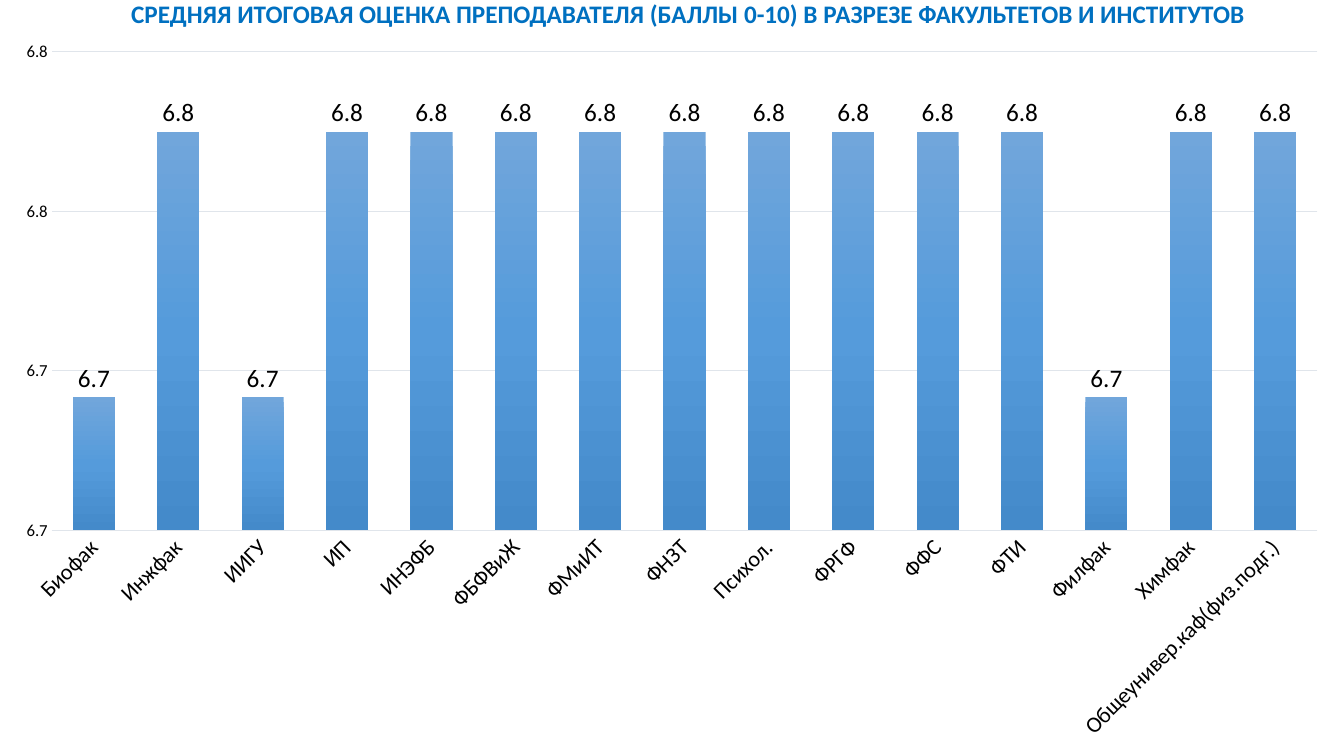
import copy
from dataclasses import dataclass
from typing import NamedTuple

import pptx
import pptx.chart.data
import pptx.dml.color
import pptx.enum.chart
import pptx.enum.text
import pptx.oxml
import pptx.oxml.ns
import pptx.util

Pt = pptx.util.Pt
RGBColor = pptx.dml.color.RGBColor


@dataclass(frozen=True)
class Theme:
    font: str = "Calibri"
    title_color: str = "0070C0"
    text_color: str = "000000"
    line_color: str = "E0E5EB"
    bar_gradient: tuple[str, ...] = ("71A6DB", "559BDB", "448ACA")
    title_size: int = 18
    label_size: int = 18
    category_size: int = 16
    value_size: int = 12
    line_width: float = 0.75


class Box(NamedTuple):
    left: float
    top: float
    width: float
    height: float

    def lengths(self) -> list[pptx.util.Length]:
        return [Pt(value) for value in self]


class Faculty(NamedTuple):
    name: str
    score: float


THEME = Theme()
SLIDE_WIDTH, SLIDE_HEIGHT = 960, 540
TITLE_BOX = Box(86.4, -4.8, 818.6, 51)
CHART_BOX = Box(0, 19.5, 960, 520.5)
PLOT_BOX = Box(37, 37, 904, 342)
AXIS_MINIMUM, AXIS_STEP, AXIS_INTERVALS = 6.65, 0.06, 3
TITLE = ("СРЕДНЯЯ ИТОГОВАЯ ОЦЕНКА ПРЕПОДАВАТЕЛЯ (БАЛЛЫ 0-10) "
         "В РАЗРЕЗЕ ФАКУЛЬТЕТОВ И ИНСТИТУТОВ")
FACULTIES = [
    Faculty("Биофак", 6.7),
    Faculty("Инжфак", 6.8),
    Faculty("ИИГУ", 6.7),
    Faculty("ИП", 6.8),
    Faculty("ИНЭФБ", 6.8),
    Faculty("ФБФВиЖ", 6.8),
    Faculty("ФМиИТ", 6.8),
    Faculty("ФНЗТ", 6.8),
    Faculty("Психол.", 6.8),
    Faculty("ФРГФ", 6.8),
    Faculty("ФФС", 6.8),
    Faculty("ФТИ", 6.8),
    Faculty("Филфак", 6.7),
    Faculty("Химфак", 6.8),
    Faculty("Общеунивер.каф(физ.подг.)", 6.8),
]


def style_font(font, size: float, color: str, bold: bool = False) -> None:
    font.name = THEME.font
    font.size = Pt(size)
    font.bold = bold
    font.color.rgb = RGBColor.from_string(color)


def style_line(line) -> None:
    line.color.rgb = RGBColor.from_string(THEME.line_color)
    line.width = Pt(THEME.line_width)


def add_title(slide) -> None:
    title = slide.shapes.title
    title.left, title.top, title.width, title.height = TITLE_BOX.lengths()
    frame = title.text_frame
    frame.text = TITLE
    frame.word_wrap = False
    frame.auto_size = pptx.enum.text.MSO_AUTO_SIZE.SHAPE_TO_FIT_TEXT
    frame.vertical_anchor = pptx.enum.text.MSO_ANCHOR.TOP
    paragraph = frame.paragraphs[0]
    paragraph.alignment = pptx.enum.text.PP_ALIGN.LEFT
    style_font(paragraph.font, THEME.title_size, THEME.title_color, bold=True)


def fill_bars(fill) -> None:
    """Shade the bars from top to bottom with evenly spaced stops."""
    fill.gradient()
    fill.gradient_angle = 270
    first_stop = fill._fill._gradFill.gsLst[0]
    first_stop.addnext(copy.deepcopy(first_stop))
    last = len(THEME.bar_gradient) - 1
    for index, (stop, color) in enumerate(zip(fill.gradient_stops, THEME.bar_gradient)):
        stop.position = index / last
        stop.color.rgb = RGBColor.from_string(color)


def place_plot(chart) -> None:
    """Fix the inner plot area, as fractions of the chart frame."""
    fractions = {
        "x": (PLOT_BOX.left - CHART_BOX.left) / CHART_BOX.width,
        "y": (PLOT_BOX.top - CHART_BOX.top) / CHART_BOX.height,
        "w": PLOT_BOX.width / CHART_BOX.width,
        "h": PLOT_BOX.height / CHART_BOX.height,
    }
    modes = '<c:layoutTarget val="inner"/><c:xMode val="edge"/><c:yMode val="edge"/>'
    values = "".join(f'<c:{key} val="{value:.4f}"/>' for key, value in fractions.items())
    layout = pptx.oxml.parse_xml(
        f'<c:layout {pptx.oxml.ns.nsdecls("c")}>'
        f"<c:manualLayout>{modes}{values}</c:manualLayout></c:layout>"
    )
    plot_area = chart._chartSpace.chart.plotArea
    for existing in plot_area.findall(pptx.oxml.ns.qn("c:layout")):
        plot_area.remove(existing)
    plot_area.insert(0, layout)


def style_axes(chart) -> None:
    no_tick = pptx.enum.chart.XL_TICK_MARK.NONE
    sizes = ((chart.category_axis, THEME.category_size), (chart.value_axis, THEME.value_size))
    for axis, size in sizes:
        axis.major_tick_mark = no_tick
        axis.minor_tick_mark = no_tick
        style_font(axis.tick_labels.font, size, THEME.text_color)

    category_axis = chart.category_axis
    style_line(category_axis.format.line)
    category_axis._element.txPr.bodyPr.set("rot", str(-45 * 60000))

    value_axis = chart.value_axis
    value_axis.minimum_scale = AXIS_MINIMUM
    value_axis.maximum_scale = round(AXIS_MINIMUM + AXIS_STEP * AXIS_INTERVALS, 2)
    value_axis.major_unit = AXIS_STEP
    value_axis.format.line.fill.background()
    style_line(value_axis.major_gridlines.format.line)
    value_axis.tick_labels.number_format = "0.0"
    value_axis.tick_labels.number_format_is_linked = False


def add_score_chart(slide) -> None:
    data = pptx.chart.data.CategoryChartData(number_format="0.0")
    data.categories = [faculty.name for faculty in FACULTIES]
    data.add_series("Series 1", [faculty.score for faculty in FACULTIES])
    chart = slide.shapes.add_chart(
        pptx.enum.chart.XL_CHART_TYPE.COLUMN_CLUSTERED, *CHART_BOX.lengths(), data
    ).chart
    chart.has_title = False
    chart.has_legend = False
    style_font(chart.font, 10, THEME.text_color)
    place_plot(chart)
    style_axes(chart)

    plot = chart.plots[0]
    plot.vary_by_categories = False
    plot.gap_width = 100
    plot.overlap = -24
    fill_bars(plot.series[0].format.fill)
    plot.has_data_labels = True
    labels = plot.data_labels
    labels.show_value = True
    labels.position = pptx.enum.chart.XL_LABEL_POSITION.OUTSIDE_END
    labels.number_format = "0.0"
    labels.number_format_is_linked = False
    style_font(labels.font, THEME.label_size, THEME.text_color)


def main() -> None:
    presentation = pptx.Presentation()
    presentation.slide_width = Pt(SLIDE_WIDTH)
    presentation.slide_height = Pt(SLIDE_HEIGHT)
    slide = presentation.slides.add_slide(presentation.slide_layouts.get_by_name("Title Only"))
    add_title(slide)
    add_score_chart(slide)
    presentation.save("out.pptx")


if __name__ == "__main__":
    main()
